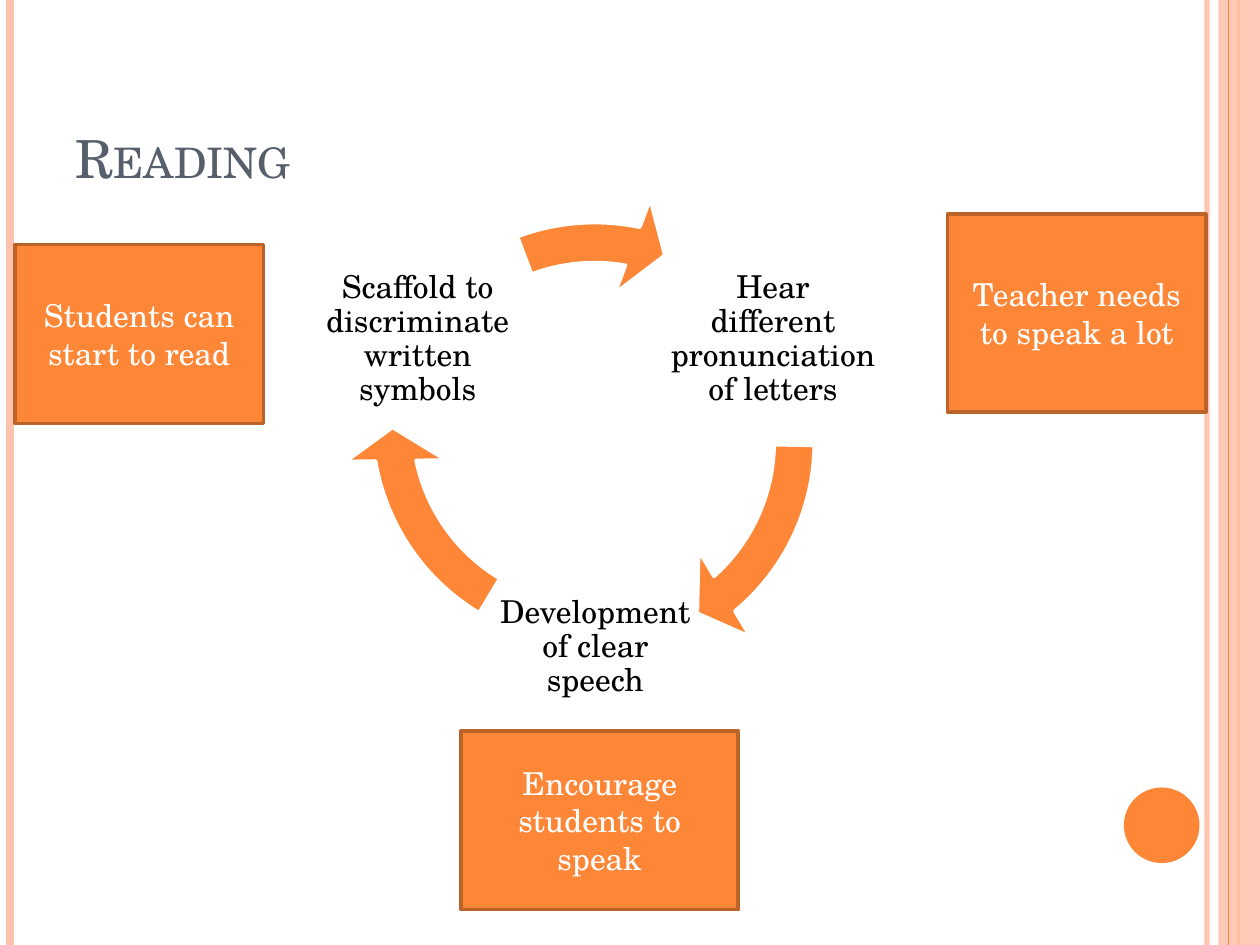
from lxml import etree
from pptx import Presentation
from pptx.dml.color import RGBColor
from pptx.enum.shapes import MSO_CONNECTOR, MSO_SHAPE
from pptx.enum.text import MSO_ANCHOR, PP_ALIGN
from pptx.oxml.ns import qn
from pptx.util import Inches, Pt

ORANGE = RGBColor(0xFE, 0x86, 0x37)
DARK_ORANGE = RGBColor(0xBC, 0x63, 0x29)
PEACH = RGBColor(0xFE, 0xC3, 0xAE)
SLATE = RGBColor(0x57, 0x5F, 0x6D)
BLACK = RGBColor(0, 0, 0)
WHITE = RGBColor(0xFF, 0xFF, 0xFF)

FONT = "TeX Gyre Schola"
CENTER, LEFT = PP_ALIGN.CENTER, PP_ALIGN.LEFT
MIDDLE, BOTTOM = MSO_ANCHOR.MIDDLE, MSO_ANCHOR.BOTTOM
RECTANGLE, OVAL = MSO_SHAPE.RECTANGLE, MSO_SHAPE.OVAL
CIRCULAR_ARROW = MSO_SHAPE.CIRCULAR_ARROW

COLUMNS, ROWS = 100, 75
STEP_SIZE = 16.7
CYCLE_SIZE = 39.6
ANGLE_UNIT = 0.6  # one degree as an adjustment value


def write_text(frame, text, size=18, color=BLACK, align=CENTER, anchor=MIDDLE,
               inset=None, line_spacing=None, small_caps=False):
    frame.word_wrap = True
    frame.vertical_anchor = anchor
    if inset is not None:
        frame.margin_left = frame.margin_right = Inches(inset)
        frame.margin_top = frame.margin_bottom = Inches(inset)
    paragraph = frame.paragraphs[0]
    paragraph.alignment = align
    paragraph.line_spacing = line_spacing
    run = paragraph.add_run()
    run.text = text
    run.font.name, run.font.size = FONT, Pt(size)
    run.font.color.rgb = color
    if small_caps:
        run.font._element.set("cap", "small")


def set_opacity(element, percent):
    """Make the first solid colour inside the element partly transparent."""
    color = element.find(".//" + qn("a:srgbClr"))
    etree.SubElement(color, qn("a:alpha")).set("val", str(percent * 1000))


class ReadingSlide:
    """Holds the slide and places elements on its grid of columns and rows."""

    def __init__(self, presentation):
        self.column = presentation.slide_width / COLUMNS
        self.row = presentation.slide_height / ROWS
        self.slide = presentation.slides.add_slide(presentation.slide_layouts[5])
        self.shapes = self.slide.shapes

    def place(self, left, top, width, height):
        return (round(left * self.column), round(top * self.row),
                round(width * self.column), round(height * self.row))

    def title(self, text, *position):
        title = self.shapes.title
        title.left, title.top, title.width, title.height = self.place(*position)
        write_text(title.text_frame, text, size=30, color=SLATE, align=LEFT,
                   anchor=BOTTOM, small_caps=True)

    def vertical_line(self, x, color, width, opacity=None):
        left, top, _, bottom = self.place(x, 0, 0, ROWS)
        line = self.shapes.add_connector(MSO_CONNECTOR.STRAIGHT, left, top, left, bottom)
        line.line.color.rgb, line.line.width = color, Pt(width)
        properties = line._element.spPr
        etree.SubElement(properties, qn("a:effectLst"))
        if opacity:
            set_opacity(properties, opacity)

    def shape(self, kind, *position, fill=ORANGE, outline=None):
        shape = self.shapes.add_shape(kind, *self.place(*position))
        shape.shadow.inherit = False
        shape.fill.solid()
        shape.fill.fore_color.rgb = fill
        if outline is None:
            shape.line.fill.background()
        else:
            shape.line.color.rgb, shape.line.width = outline, Pt(2)
        return shape

    def note(self, text, *position):
        box = self.shape(RECTANGLE, *position, outline=DARK_ORANGE)
        write_text(box.text_frame, text, color=WHITE)

    def step(self, text, left, top):
        box = self.shapes.add_textbox(*self.place(left, top, STEP_SIZE, STEP_SIZE))
        write_text(box.text_frame, text, inset=0.02, line_spacing=0.9)

    def cycle_arrow(self, left, top, start, end):
        """Draw a curved arrow between two angles, in degrees clockwise from the right."""
        arrow = self.shape(CIRCULAR_ARROW, left, top, CYCLE_SIZE, CYCLE_SIZE, outline=WHITE)
        values = (0.08, 9.59 * ANGLE_UNIT, end * ANGLE_UNIT, start * ANGLE_UNIT, 0.1)
        for index, value in enumerate(values):
            arrow.adjustments[index] = value


def main():
    presentation = Presentation()
    presentation.slide_width, presentation.slide_height = Inches(10), Inches(7.5)
    page = ReadingSlide(presentation)

    page.vertical_line(95.8, PEACH, 3, opacity=93)
    page.vertical_line(0.8, PEACH, 4.5)
    page.vertical_line(98.3, ORANGE, 1.5)
    band = page.shape(RECTANGLE, 96.7, 0, 3.3, ROWS, fill=PEACH)
    set_opacity(band._element.spPr, 87)
    page.vertical_line(97.5, ORANGE, 0.75)
    page.shape(OVAL, 89.2, 62.5, 6, 6)

    page.title("Reading", 5, 3, 81.7, 12.5)

    for text, step_place, arrow_place, angles in (
        ("Hear different pronunciation of letters", (53, 18.6), (27.4, 15.3), (0.84, 49.44)),
        ("Development of clear speech", (38.9, 43), (27.2, 13.9), (120.97, 169.57)),
        ("Scaffold to discriminate written symbols", (24.8, 18.6), (27.4, 15.3), (249.43, 280.98)),
    ):
        page.step(text, *step_place)
        page.cycle_arrow(*arrow_place, *angles)

    page.note("Teacher needs to speak a lot", 75.2, 17, 20.5, 15.7)
    page.note("Encourage students to speak", 36.6, 58, 22, 14.2)
    page.note("Students can start to read", 1.2, 19.4, 19.7, 14.2)

    presentation.save("out.pptx")


if __name__ == "__main__":
    main()
